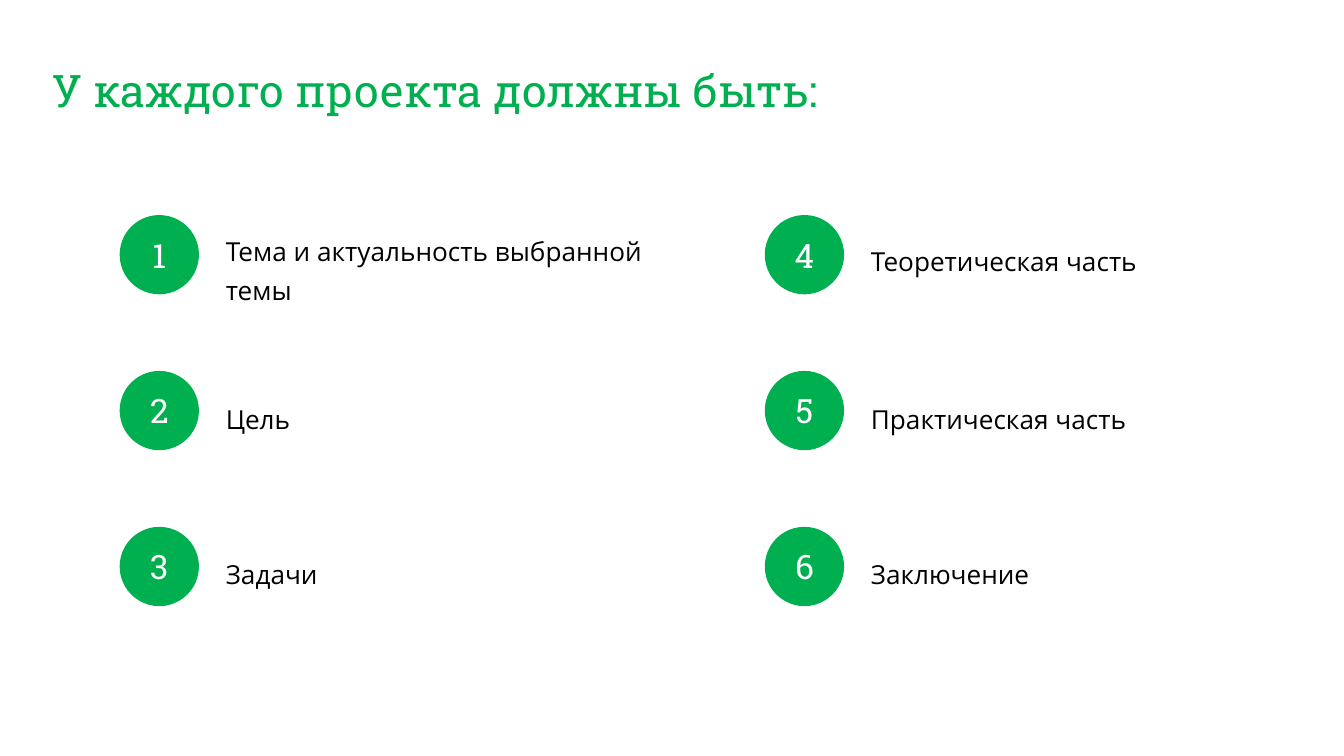
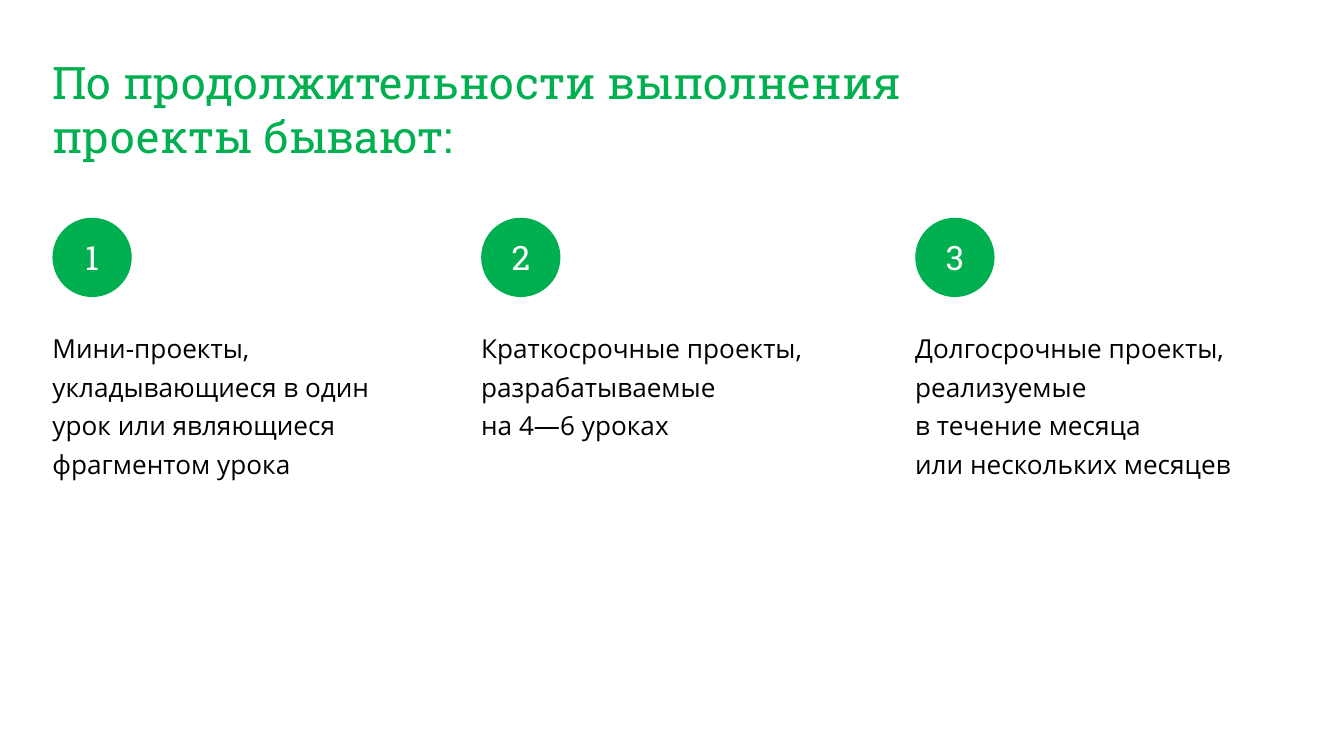
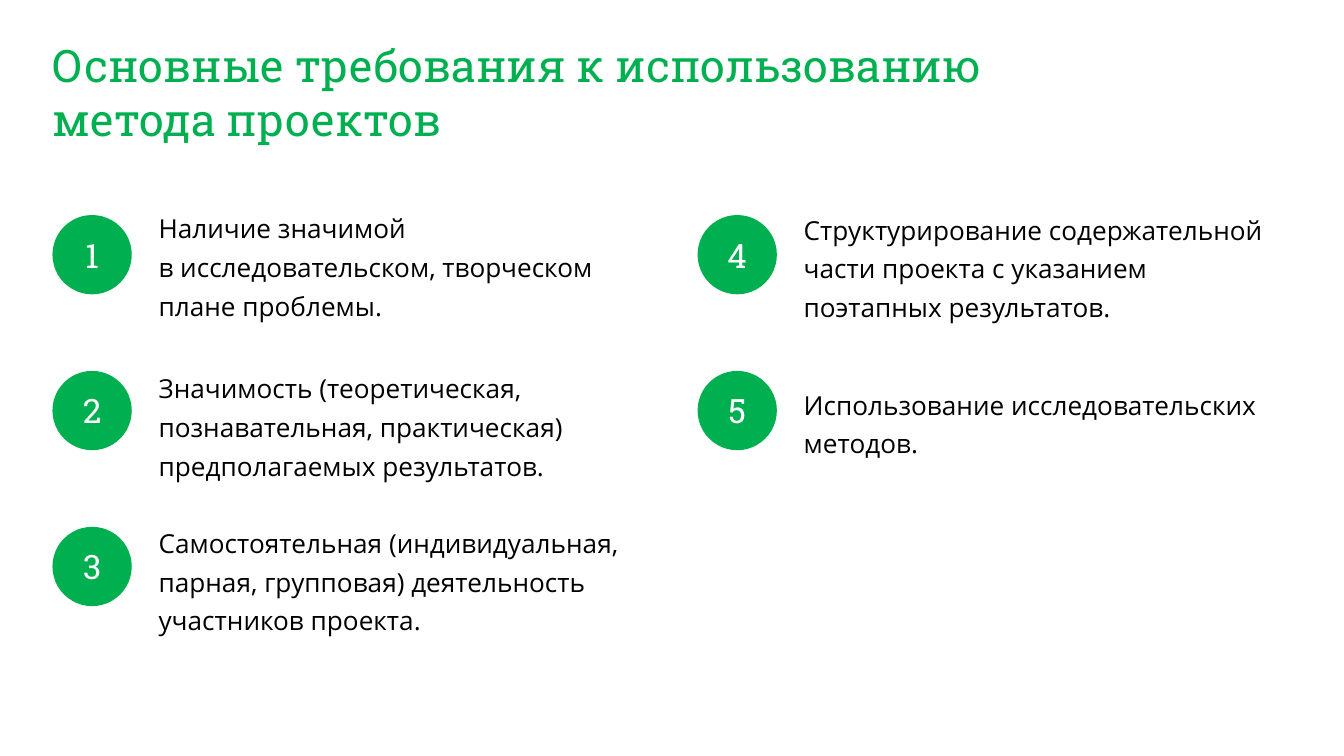
from pptx import Presentation
from pptx.dml.color import RGBColor
from pptx.enum.shapes import MSO_SHAPE
from pptx.enum.text import MSO_ANCHOR, PP_ALIGN
from pptx.util import Inches, Pt

GREEN = RGBColor(0x00, 0xB0, 0x50)
BLACK = RGBColor(0x00, 0x00, 0x00)
WHITE = RGBColor(0xFF, 0xFF, 0xFF)

HEADING_FONT = "Roboto Slab"
BODY_FONT = "Open Sans"
MARGIN = 0.39
BADGE_SIZE = 0.59
BADGE_GAP = 0.2
LINE_HEIGHT = 0.24
ROWS_TOP = 1.6
ROW_STEP = 1.16
ROWS_PER_COLUMN = 3
COLUMN_STEP = 4.8
ROW_TEXT_WIDTH = 3.82


class ProjectDeck:
    def __init__(self):
        self.deck = Presentation()
        self.deck.slide_width = Inches(10)
        self.deck.slide_height = Inches(10 * 9 / 16)
        self.page = None

    def new_page(self, title, top, width, height):
        self.page = self.deck.slides.add_slide(self.deck.slide_layouts[6])
        self.text(self.page.shapes, title, MARGIN, top, width, height,
                  HEADING_FONT, 24, GREEN)

    def text(self, shapes, words, left, top, width, height, font, size, color,
             indent=0, spacing=None):
        box = shapes.add_textbox(Inches(left), Inches(top), Inches(width), Inches(height))
        frame = box.text_frame
        frame.word_wrap = True
        frame.margin_left = Inches(indent)
        frame.margin_top = frame.margin_right = frame.margin_bottom = 0
        para = frame.paragraphs[0]
        para.text = words
        para.line_spacing = spacing
        self.set_font(para, font, size, color)

    def body(self, shapes, words, left, top, width, lines, indent=0):
        self.text(shapes, words, left, top, width, lines * LINE_HEIGHT,
                  BODY_FONT, 14, BLACK, indent, 1.23)

    def badge(self, shapes, number, left, top):
        circle = shapes.add_shape(MSO_SHAPE.OVAL, Inches(left), Inches(top),
                                  Inches(BADGE_SIZE), Inches(BADGE_SIZE))
        circle.shadow.inherit = False
        circle.fill.solid()
        circle.fill.fore_color.rgb = GREEN
        circle.line.fill.background()
        circle.text_frame.vertical_anchor = MSO_ANCHOR.MIDDLE
        para = circle.text_frame.paragraphs[0]
        para.text = str(number)
        para.alignment = PP_ALIGN.CENTER
        self.set_font(para, HEADING_FONT, 18, WHITE)

    def numbered_rows(self, rows, left):
        for index, (words, text_top, lines) in enumerate(rows):
            column, row = divmod(index, ROWS_PER_COLUMN)
            badge_left = left + column * COLUMN_STEP
            group = self.page.shapes.add_group_shape()
            self.body(group.shapes, words, badge_left + BADGE_SIZE, text_top,
                      ROW_TEXT_WIDTH, lines, BADGE_GAP)
            self.badge(group.shapes, index + 1, badge_left, ROWS_TOP + row * ROW_STEP)

    def numbered_columns(self, columns):
        for number, (words, left, lines) in enumerate(columns, 1):
            self.body(self.page.shapes, words, left, 2.42, 2.8, lines)
            self.badge(self.page.shapes, number, left, 1.62)

    def set_font(self, para, name, size, color):
        para.font.name = name
        para.font.size = Pt(size)
        para.font.color.rgb = color

    def save(self):
        self.deck.save("out.pptx")


def main():
    project = ProjectDeck()

    project.new_page("У каждого проекта должны быть:", 0.47, 9.22, 0.4)
    project.numbered_rows([
        ("Тема и актуальность выбранной темы", 1.7, 2),
        ("Цель", 2.95, 1),
        ("Задачи", 4.1, 1),
        ("Теоретическая часть", 1.77, 1),
        ("Практическая часть", 2.95, 1),
        ("Заключение", 4.1, 1),
    ], left=0.89)

    project.new_page("По продолжительности выполнения проекты бывают:", 0.41, 6.44, 0.81)
    project.numbered_columns([
        ("Мини-проекты, укладывающиеся в один урок или являющиеся фрагментом урока",
         MARGIN, 4),
        ("Краткосрочные проекты, разрабатываемые \vна 4—6 уроках", 3.58, 3),
        ("Долгосрочные проекты, реализуемые \vв течение месяца \vили нескольких месяцев",
         6.81, 4),
    ])

    project.new_page("Основные требования к использованию метода проектов", 0.28, 7.05, 0.81)
    project.numbered_rows([
        ("Наличие значимой \vв исследовательском, творческом плане проблемы.", 1.53, 3),
        ("Значимость (теоретическая, познавательная, практическая) "
         "предполагаемых результатов.", 2.72, 3),
        ("Самостоятельная (индивидуальная, парная, групповая) деятельность "
         "участников проекта.", 3.87, 3),
        ("Структурирование содержательной части проекта с указанием "
         "поэтапных результатов.", 1.54, 3),
        ("Использование исследовательских методов.", 2.84, 2),
    ], left=MARGIN)

    project.save()


if __name__ == "__main__":
    main()
